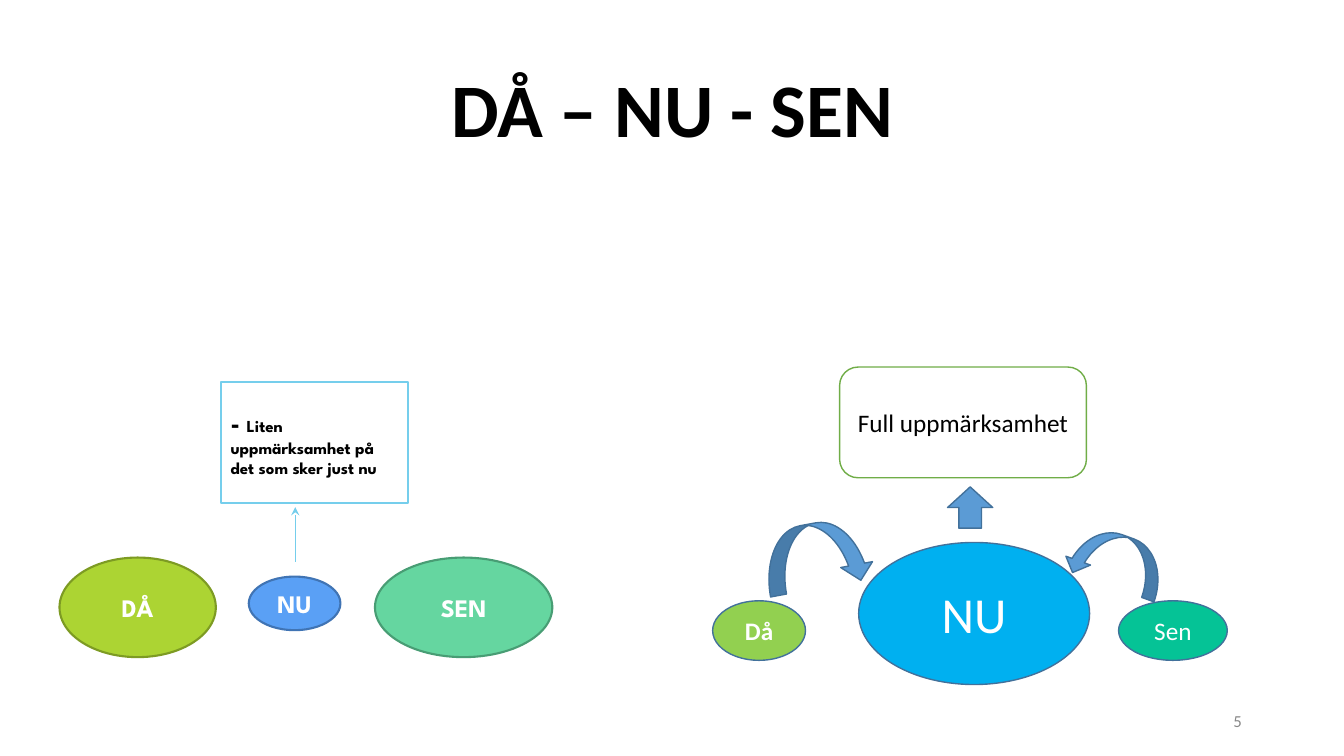
from pptx import Presentation
from pptx import util as u
from pptx.dml.color import RGBColor
from pptx.enum import shapes, text
from pptx.oxml.ns import qn
from lxml import etree

BLACK = RGBColor(0x00, 0x00, 0x00)
WHITE = RGBColor(0xFF, 0xFF, 0xFF)
GREY = RGBColor(0x88, 0x88, 0x88)
LIME = RGBColor(0xAC, 0xD4, 0x33)
LIME_EDGE = RGBColor(0x7D, 0x9B, 0x23)
BLUE = RGBColor(0x5A, 0xA0, 0xF5)
BLUE_EDGE = RGBColor(0x40, 0x74, 0xB4)
MINT = RGBColor(0x65, 0xD6, 0xA0)
MINT_EDGE = RGBColor(0x48, 0x9D, 0x74)
SKY = RGBColor(0x75, 0xCE, 0xEC)
CYAN = RGBColor(0x00, 0xB0, 0xF0)
GREEN = RGBColor(0x92, 0xD0, 0x50)
TEAL = RGBColor(0x05, 0xC3, 0x96)
LEAF = RGBColor(0x70, 0xAD, 0x47)
STEEL = RGBColor(0x5B, 0x9B, 0xD5)
NAVY = RGBColor(0x42, 0x71, 0x9B)

SHAPE = shapes.MSO_SHAPE
ALIGN = text.PP_ALIGN
BODY = "Calibri"
DISPLAY = "League Spartan"


def lengths(*values):
    return [u.Cm(value) for value in values]


def style_font(font, name, size, color, bold=False):
    font.name = name
    font.size = u.Pt(size)
    font.bold = bold
    font.color.rgb = color


def write(box, words, name, size, color, bold=False, align=ALIGN.CENTER):
    frame = box.text_frame
    frame.word_wrap = True
    frame.vertical_anchor = text.MSO_ANCHOR.MIDDLE
    para = frame.paragraphs[0]
    para.text = words
    para.alignment = align
    style_font(para.font, name, size, color, bold)
    return para


def add_figure(page, kind, place, fill, edge, width=1):
    figure = page.shapes.add_shape(kind, *lengths(*place))
    figure.shadow.inherit = False
    figure.fill.solid()
    figure.fill.fore_color.rgb = fill
    figure.line.color.rgb = edge
    figure.line.width = u.Pt(width)
    return figure


def add_title(page, words):
    title = page.shapes.title
    title.left, title.top, title.width, title.height = lengths(2.34, 1.02, 29.21, 3.68)
    write(title, words, BODY, 54, BLACK, True).line_spacing = 0.9


def add_note(page):
    note = add_figure(page, SHAPE.RECTANGLE, (5.56, 9.63, 4.72, 3.05), WHITE, SKY, 1.5)
    para = write(note, "- ", DISPLAY, 18, BLACK, True, ALIGN.LEFT)
    span = para.add_run()
    span.text = "Liten uppmärksamhet på det som sker just nu"
    span.font.size = u.Pt(12)


def add_pointer(page, start, end):
    pointer = page.shapes.add_connector(
        shapes.MSO_CONNECTOR.STRAIGHT, *lengths(*start, *end))
    pointer.line.color.rgb = SKY
    pointer.line.width = u.Pt(0.75)
    properties = pointer._element.spPr
    etree.SubElement(properties.find(qn("a:ln")), qn("a:tailEnd"), type="stealth")
    etree.SubElement(properties, qn("a:effectLst"))


def add_curved_arrow(page, place, rotation, mirrored=False):
    arrow = add_figure(page, SHAPE.CURVED_DOWN_ARROW, place, STEEL, NAVY)
    arrow.rotation = rotation
    if mirrored:
        arrow._element.spPr.find(qn("a:xfrm")).set("flipH", "1")


def add_page_number(page, number):
    box = page.shapes.add_textbox(*lengths(23.93, 17.65, 7.62, 1.02))
    write(box, number, BODY, 12, GREY, align=ALIGN.RIGHT)


def main():
    deck = Presentation()
    deck.slide_width, deck.slide_height = lengths(33.87, 19.05)
    page = deck.slides.add_slide(deck.slide_layouts[5])
    add_title(page, "DÅ – NU - SEN")

    for words, place, fill, edge in (
        ("DÅ", (1.5, 14.05, 3.94, 2.51), LIME, LIME_EDGE),
        ("NU", (6.27, 14.53, 2.31, 1.35), BLUE, BLUE_EDGE),
        ("SEN", (9.45, 14.05, 4.47, 2.51), MINT, MINT_EDGE),
    ):
        oval = add_figure(page, SHAPE.OVAL, place, fill, edge, 1.5)
        write(oval, words, DISPLAY, 18, WHITE, True)
    add_note(page)
    add_pointer(page, (7.44, 14.15), (7.44, 12.78))

    for words, place, fill, size, bold in (
        ("NU", (21.64, 13.67, 5.82, 3.58), CYAN, 36, False),
        ("Då", (17.96, 15.14, 2.34, 1.5), GREEN, 18, True),
        ("Sen", (28.19, 15.14, 2.74, 1.5), TEAL, 18, False),
    ):
        oval = add_figure(page, SHAPE.OVAL, place, fill, NAVY)
        write(oval, words, BODY, size, WHITE, bold)
    focus = add_figure(page, SHAPE.ROUNDED_RECTANGLE, (21.16, 9.25, 6.22, 2.79), WHITE, LEAF)
    write(focus, "Full uppmärksamhet", BODY, 18, BLACK)
    add_figure(page, SHAPE.UP_ARROW, (23.88, 12.27, 1.14, 1.04), STEEL, NAVY)
    add_curved_arrow(page, (19.25, 13.18, 2.72, 1.63), 349.5)
    add_curved_arrow(page, (26.87, 13.46, 2.51, 1.32), 19.8, mirrored=True)

    add_page_number(page, "5")
    deck.save("out.pptx")


if __name__ == "__main__":
    main()
